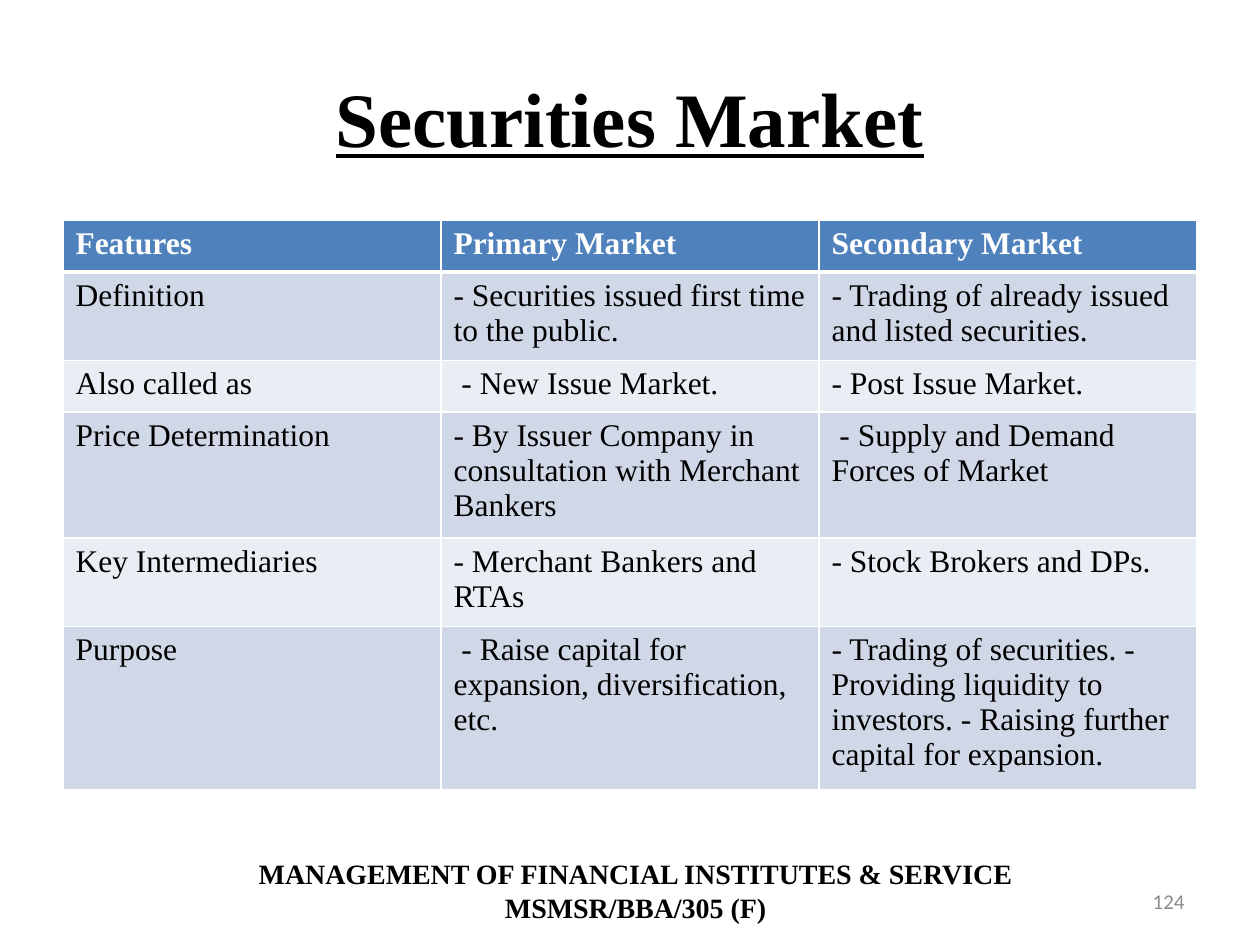
from dataclasses import dataclass

from lxml import etree
from pptx import Presentation
from pptx.dml.color import RGBColor
from pptx.enum.text import MSO_ANCHOR as Anchor, PP_ALIGN as Align
from pptx.oxml.ns import qn
from pptx.util import Inches, Pt


@dataclass(frozen=True)
class Theme:
    serif: str = "Times New Roman"
    sans: str = "Calibri"
    ink: str = "000000"
    white: str = "FFFFFF"
    grey: str = "8C8C8C"
    header: str = "4F81BD"
    bands: tuple = ("D0D8E8", "E9EDF4")
    title_size: int = 44
    table_size: int = 18
    footer_size: int = 16
    number_size: int = 12


THEME = Theme()

MARKET_ROWS = [
    ("Features", "Primary Market", "Secondary Market"),
    ("Definition", "- Securities issued first time to the public.",
     "- Trading of already issued and listed securities."),
    ("Also called as", " - New Issue Market.", "- Post Issue Market."),
    ("Price Determination",
     "- By Issuer Company in consultation with Merchant Bankers",
     " - Supply and Demand Forces of Market"),
    ("Key Intermediaries", "- Merchant Bankers and RTAs",
     "- Stock Brokers and DPs."),
    ("Purpose", " - Raise capital for expansion, diversification, etc.",
     "- Trading of securities. - Providing liquidity to investors. "
     "- Raising further capital for expansion."),
]


def add_span(para, text, size, color=THEME.ink, font=THEME.serif,
             bold=False, underline=False):
    span = para.add_run()
    span.text = text
    span.font.size = Pt(size)
    span.font.name = font
    span.font.bold = bold
    span.font.underline = underline
    span.font.color.rgb = RGBColor.from_string(color)


def add_text(page, box, lines, align, anchor, **style):
    """Place one paragraph in the box, with a line break between lines."""
    frame = page.shapes.add_textbox(*map(Inches, box)).text_frame
    frame.word_wrap = True
    frame.vertical_anchor = anchor
    para = frame.paragraphs[0]
    para.alignment = align
    for index, line in enumerate(lines):
        if index:
            para.add_line_break()
        add_span(para, line, **style)


def set_borders(cell, bottom_width):
    """Draw white borders; they must come before the fill in the cell XML."""
    props = cell._tc.get_or_add_tcPr()
    widths = {"lnL": 1, "lnR": 1, "lnT": 1, "lnB": bottom_width}
    for position, (edge, width) in enumerate(widths.items()):
        line = etree.Element(qn(f"a:{edge}"), w=str(Pt(width)))
        fill = etree.SubElement(line, qn("a:solidFill"))
        etree.SubElement(fill, qn("a:srgbClr"), val=THEME.white)
        props.insert(position, line)


def add_market_table(page, box, rows):
    table = page.shapes.add_table(
        len(rows), len(rows[0]), *map(Inches, box)).table
    for row_index, texts in enumerate(rows):
        is_header = row_index == 0
        fill = THEME.header if is_header else THEME.bands[(row_index - 1) % 2]
        for column, text in enumerate(texts):
            cell = table.cell(row_index, column)
            cell.fill.solid()
            cell.fill.fore_color.rgb = RGBColor.from_string(fill)
            # The rule under the header is drawn by both cells that share it.
            set_borders(cell, 3 if is_header else 1)
            if row_index == 1:
                cell._tc.tcPr.find(qn("a:lnT")).set("w", str(Pt(3)))
            add_span(cell.text_frame.paragraphs[0], text, THEME.table_size,
                     THEME.white if is_header else THEME.ink, bold=is_header)


def add_footer(page, text_box, number_box):
    add_text(page, text_box,
             ["MANAGEMENT OF FINANCIAL INSTITUTES & SERVICE",
              "MSMSR/BBA/305 (F)"],
             Align.CENTER, Anchor.TOP, size=THEME.footer_size, bold=True)
    add_text(page, number_box, ["124"], Align.RIGHT, Anchor.MIDDLE,
             size=THEME.number_size, color=THEME.grey, font=THEME.sans)


def main():
    deck = Presentation()
    deck.slide_width, deck.slide_height = Inches(10), Inches(7.5)
    page = deck.slides.add_slide(deck.slide_layouts[6])
    add_text(page, (0.5, 0.3, 9, 1.25), ["Securities Market"],
             Align.CENTER, Anchor.MIDDLE,
             size=THEME.title_size, bold=True, underline=True)
    add_market_table(page, (0.5, 1.75, 9, 0.41 * len(MARKET_ROWS)),
                     MARKET_ROWS)
    add_footer(page, (0.84, 6.75, 8.41, 0.64), (7.17, 6.95, 2.33, 0.4))
    deck.save("out.pptx")


if __name__ == "__main__":
    main()
